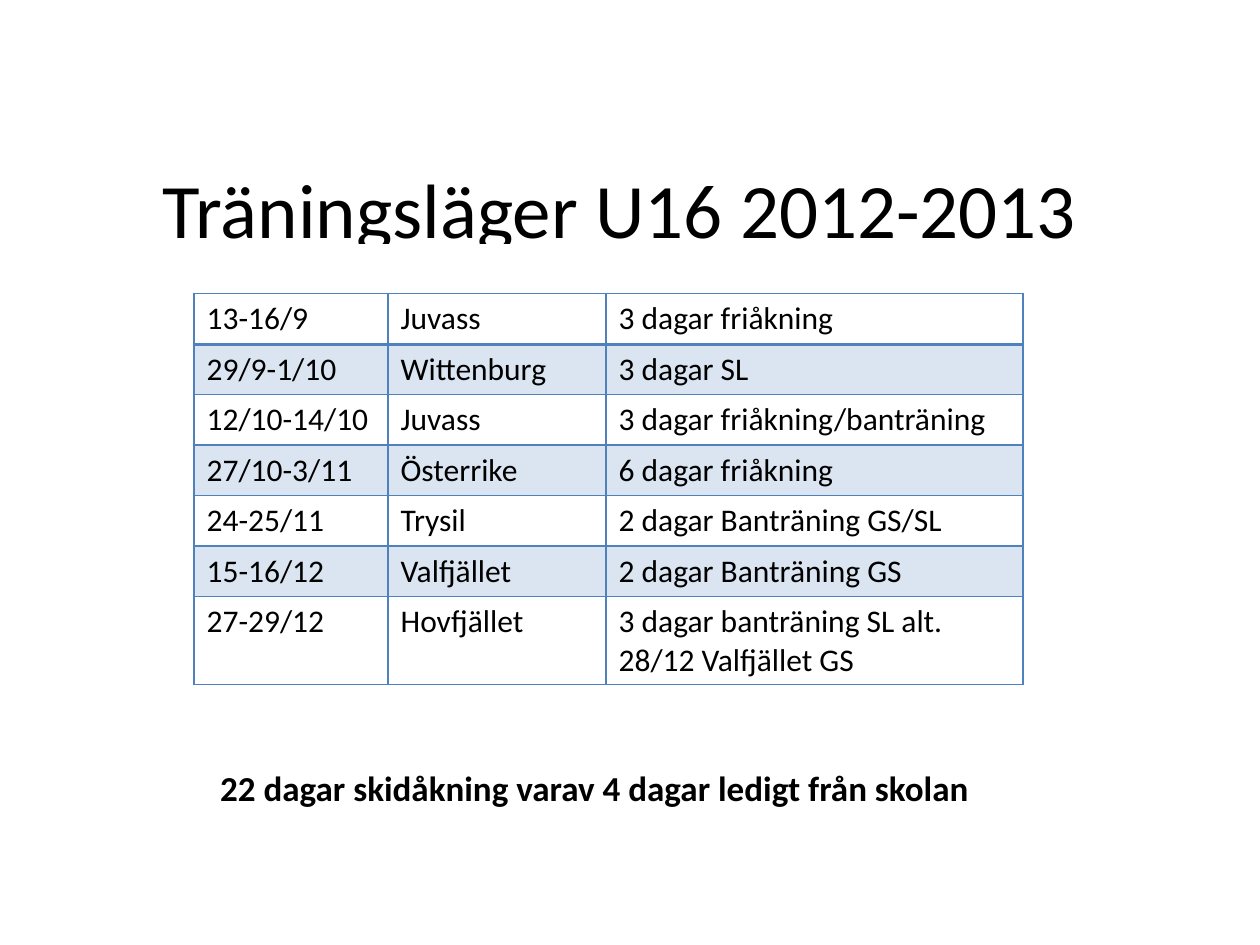
from dataclasses import dataclass

from lxml.etree import SubElement
from pptx import Presentation
from pptx.dml.color import RGBColor as Rgb
from pptx.enum.text import MSO_ANCHOR as Anchor, PP_ALIGN as Align
from pptx.oxml import parse_xml
from pptx.oxml.ns import nsdecls, qn
from pptx.util import Inches, Pt


@dataclass(frozen=True)
class Theme:
    font: str = "Calibri"
    text: str = "000000"
    accent: str = "4F81BD"
    paper: str = "FFFFFF"
    band_alpha: int = 20
    title_size: int = 44
    note_size: int = 20
    cell_size: int = 18
    thin: int = 1
    header_rule: int = 2
    strip_rule: int = 3


THEME = Theme()
WIDTH, HEIGHT = Inches(10), Inches(7.5)

CAMPS = [
    ("13-16/9", "Juvass", "3 dagar friåkning"),
    ("29/9-1/10", "Wittenburg", "3 dagar SL"),
    ("12/10-14/10", "Juvass", "3 dagar friåkning/banträning"),
    ("27/10-3/11", "Österrike", "6 dagar friåkning"),
    ("24-25/11", "Trysil", "2 dagar Banträning GS/SL"),
    ("15-16/12", "Valfjället", "2 dagar Banträning GS"),
    ("27-29/12", "Hovfjället", "3 dagar banträning SL alt. 28/12 Valfjället GS"),
]


def across(percent):
    return round(WIDTH * percent / 100)


def down(percent):
    return round(HEIGHT * percent / 100)


def area(left, top, width, height):
    return across(left), down(top), across(width), down(height)


def write(frame, text, size, align=Align.LEFT, bold=False):
    frame.text = text
    frame.word_wrap = True
    paragraph = frame.paragraphs[0]
    paragraph.alignment = align
    for run in paragraph.runs:
        run.font.name = THEME.font
        run.font.size = Pt(size)
        run.font.bold = bold
        run.font.color.rgb = Rgb.from_string(THEME.text)


def add_title(slide, text):
    title = slide.shapes.title
    title.left, title.top, title.width, title.height = area(6.7, 11.2, 85, 21.47)
    write(title.text_frame, text, THEME.title_size, Align.CENTER)
    title.text_frame.vertical_anchor = Anchor.MIDDLE


def add_note(slide, text):
    frame = slide.shapes.add_textbox(*area(12.2, 75.2, 70, 14.67)).text_frame
    write(frame, text, THEME.note_size, Align.CENTER, bold=True)
    frame.margin_top = down(5.87)


def add_grid(slide, left, top, columns, rows):
    box = area(left, top, sum(columns), sum(rows))
    grid = slide.shapes.add_table(len(rows), len(columns), *box).table
    grid.first_row = grid.horz_banding = False
    for column, share in zip(grid.columns, columns):
        column.width = across(share)
    for row, share in zip(grid.rows, rows):
        row.height = down(share)
    return grid


def set_borders(cell, color, top, bottom):
    properties = cell._tc.get_or_add_tcPr()
    widths = {"lnL": THEME.thin, "lnR": THEME.thin, "lnT": top, "lnB": bottom}
    for position, (side, width) in enumerate(widths.items()):
        properties.insert(position, parse_xml(
            f'<a:{side} {nsdecls("a")} w="{Pt(width)}"><a:solidFill>'
            f'<a:srgbClr val="{color}"/></a:solidFill></a:{side}>'))


def fill_cell(cell, color, alpha=100):
    cell.fill.solid()
    cell.fill.fore_color.rgb = Rgb.from_string(color)
    if alpha < 100:
        tint = next(cell._tc.tcPr.iter(qn("a:srgbClr")))
        SubElement(tint, qn("a:alpha")).set("val", str(alpha * 1000))


def add_header_strip(slide):
    strip = add_grid(slide, 14.6, 25.87, (15, 18.1, 33.6), (5.47,))
    for cell in strip.iter_cells():
        fill_cell(cell, THEME.paper)
        set_borders(cell, THEME.paper, THEME.thin, THEME.strip_rule)


def add_camps(slide, camps):
    rows = [4.8] * (len(camps) - 1) + [8.4]
    schedule = add_grid(slide, 15.4, 31.07, (15.4, 17.3, 33.1), rows)
    for row, camp in enumerate(camps):
        top = THEME.header_rule if row == 1 else THEME.thin
        bottom = THEME.header_rule if row == 0 else THEME.thin
        for column, text in enumerate(camp):
            cell = schedule.cell(row, column)
            write(cell.text_frame, text, THEME.cell_size)
            if row % 2:
                fill_cell(cell, THEME.accent, THEME.band_alpha)
            else:
                cell.fill.background()
            set_borders(cell, THEME.accent, top, bottom)


def main():
    deck = Presentation()
    deck.slide_width, deck.slide_height = WIDTH, HEIGHT
    slide = deck.slides.add_slide(deck.slide_layouts.get_by_name("Title Only"))
    add_title(slide, "Träningsläger U16 2012-2013")
    add_note(slide, "22 dagar skidåkning varav 4 dagar ledigt från skolan")
    add_header_strip(slide)
    add_camps(slide, CAMPS)
    deck.save("out.pptx")


if __name__ == "__main__":
    main()
